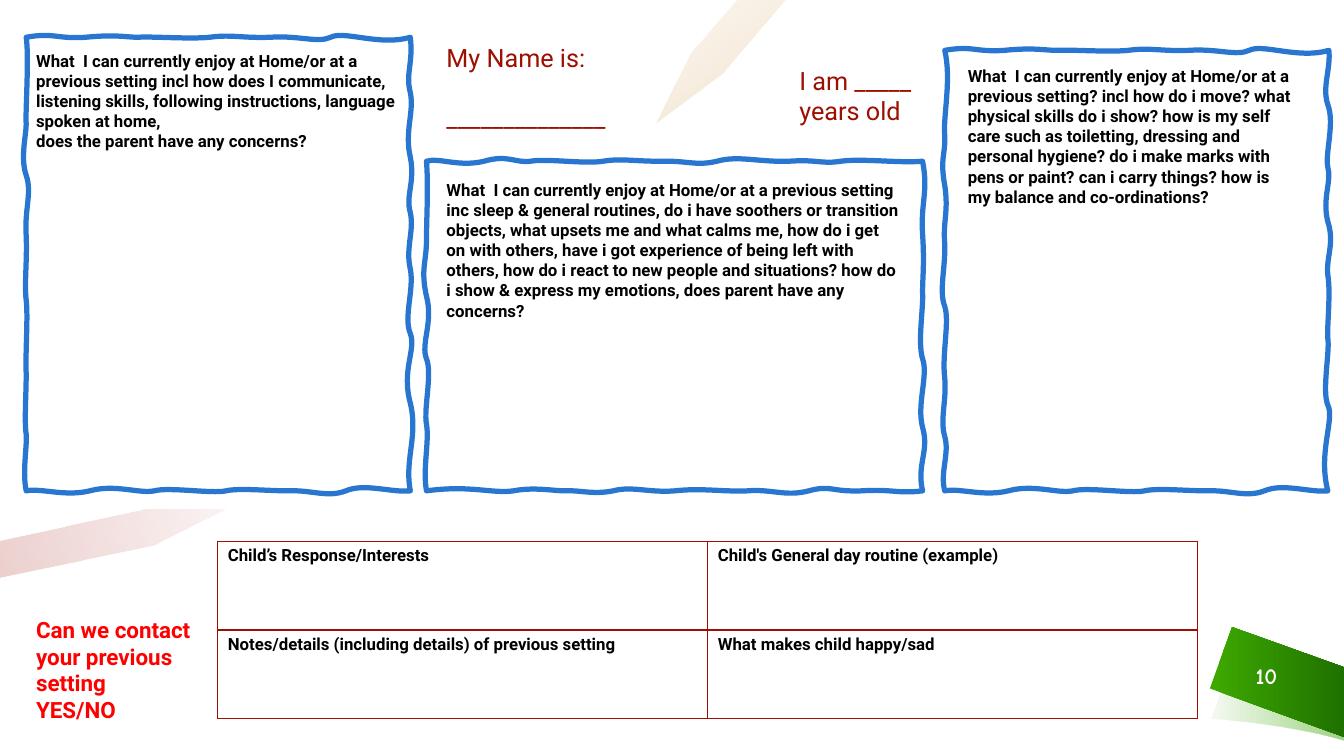
from lxml.etree import SubElement
from pptx import Presentation
from pptx.dml.color import RGBColor
from pptx.enum.text import MSO_ANCHOR, PP_ALIGN
from pptx.oxml.ns import qn
from pptx.util import Inches, Pt

BLACK = RGBColor(0x00, 0x00, 0x00)
WHITE = RGBColor(0xFF, 0xFF, 0xFF)
RED = RGBColor(0xFF, 0x00, 0x00)
MAROON = RGBColor(0x9D, 0x0F, 0x00)
OCHRE = RGBColor(0xC0, 0x74, 0x00)
BLUE = RGBColor(0x00, 0x5C, 0xC9)
GREEN = RGBColor(0x3D, 0xA8, 0x00)
DARK_GREEN = RGBColor(0x1F, 0x71, 0x00)

prs = Presentation()
prs.slide_width, prs.slide_height = Inches(13.33), Inches(7.5)
slide = prs.slides.add_slide(prs.slide_layouts[6])
shapes = slide.shapes


def draw_outline(start, segments):
    builder = shapes.build_freeform(Inches(start[0]), Inches(start[1]))
    builder.add_line_segments([(Inches(s[-2]), Inches(s[-1])) for s in segments], close=True)
    outline = builder.convert_to_shape()
    outline.shadow.inherit = False
    steps = list(outline._element.spPr.iter(qn("a:lnTo")))
    for step, segment in zip(steps, segments):
        if len(segment) == 6:
            step.tag = qn("a:cubicBezTo")
            for i in (0, 2):
                x, y = Inches(segment[i]) - outline.left, Inches(segment[i + 1]) - outline.top
                control = SubElement(step, qn("a:pt"), x=str(x), y=str(y))
                step.insert(i // 2, control)
    return outline


def write_text(frame, paragraphs, size, color, bold=True, font="Roboto"):
    frame.word_wrap = True
    frame.text = "\n".join(paragraphs)
    for paragraph in frame.paragraphs:
        for run in paragraph.runs:
            run.font.name = font
            run.font.size = Pt(size)
            run.font.bold = bold
            run.font.color.rgb = color


ribbons = [
    ((12.02, 7.13), [(12.02, 7.13, 12.78, 7.18, 13.33, 7.35), (13.33, 6.68),
                     (12.72, 6.51, 12.24, 6.52, 12.24, 6.52)],
     [(0.03, GREEN, 6), (1, GREEN, 50)], 0),
    ((13.33, 6.62), [(12.22, 6.22), (12, 6.83), (13.33, 7.31)],
     [(0.03, GREEN, 100), (1, DARK_GREEN, 100)], 0),
    ((7.79, 0), [(7.31, 0), (6.85, 0.53), (6.5, 1.23), (7.16, 0.74)],
     [(0, OCHRE, 5), (1, OCHRE, 20)], 53),
    ((2.24, 5.05), [(1.42, 5.05), (0, 5.36), (0, 5.73), (1.53, 5.41)],
     [(0, MAROON, 5), (1, MAROON, 20)], 164),
]
for start, segments, stops, clockwise_angle in ribbons:
    ribbon = draw_outline(start, segments)
    ribbon.line.fill.background()
    ribbon.fill.gradient()
    ribbon.fill.gradient_angle = -clockwise_angle % 360
    for stop, (position, color, _) in zip(ribbon.fill.gradient_stops, stops):
        stop.position = position
        stop.color.rgb = color
    for color_element, (_, _, opacity) in zip(ribbon._element.spPr.iter(qn("a:srgbClr")), stops):
        SubElement(color_element, qn("a:alpha"), val=str(opacity * 1000))

page_number = shapes.add_textbox(Inches(12.21), Inches(6.5), Inches(0.7), Inches(0.4)).text_frame
write_text(page_number, ["10"], 16, WHITE, font="Comic Neue")
page_number.vertical_anchor = MSO_ANCHOR.MIDDLE
page_number.paragraphs[0].alignment = PP_ALIGN.CENTER

outer_top = [
    (0.54, 0.32, 0.56, 0.39, 0.85, 0.37), (1.15, 0.34, 1.25, 0.37, 1.37, 0.37),
    (1.5, 0.36, 1.88, 0.39, 2.08, 0.37), (2.29, 0.34, 2.4, 0.38, 2.68, 0.37),
    (2.97, 0.35, 3.15, 0.43, 3.28, 0.37), (3.41, 0.3, 3.77, 0.46, 4.07, 0.37),
]
outer_bottom = [
    (3.89, 4.89, 3.61, 4.79, 3.43, 4.87), (3.25, 4.94, 3.09, 4.86, 2.87, 4.87),
    (2.65, 4.87, 2.37, 4.84, 2.24, 4.87), (2.11, 4.9, 1.67, 4.83, 1.53, 4.87),
    (1.38, 4.9, 1.14, 4.8, 0.89, 4.87), (0.64, 4.93, 0.41, 4.84, 0.26, 4.87),
]
shift = 9.11
drop = 0.13
right_top, right_bottom = [
    [tuple(v + (dy if i % 2 else shift) for i, v in enumerate(curve)) for curve in edge]
    for edge, dy in ((outer_top, drop), (outer_bottom, 0))
]

right_frame = right_top + [
    (13.2, 0.69, 13.11, 0.86, 13.17, 1.04), (13.24, 1.22, 13.14, 1.53, 13.17, 1.66),
    (13.21, 1.8, 13.11, 1.97, 13.17, 2.2), (13.24, 2.42, 13.15, 2.55, 13.17, 2.73),
    (13.2, 2.92, 13.16, 3.23, 13.17, 3.36), (13.19, 3.49, 13.11, 3.88, 13.17, 4.02),
    (13.24, 4.16, 13.07, 4.49, 13.17, 4.87),
] + right_bottom + [
    (9.32, 4.69, 9.42, 4.5, 9.37, 4.33), (9.32, 4.16, 9.39, 3.98, 9.37, 3.75),
    (9.34, 3.52, 9.42, 3.19, 9.37, 3.04), (9.31, 2.89, 9.38, 2.64, 9.37, 2.42),
    (9.35, 2.2, 9.41, 2.1, 9.37, 1.84), (9.32, 1.57, 9.38, 1.52, 9.37, 1.35),
    (9.35, 1.17, 9.44, 0.79, 9.37, 0.5),
]
middle_frame = [
    (4.35, 1.56, 4.55, 1.66, 4.8, 1.6), (5.04, 1.53, 5.11, 1.62, 5.26, 1.6),
    (5.42, 1.57, 5.8, 1.63, 5.98, 1.6), (6.16, 1.57, 6.28, 1.6, 6.54, 1.6),
    (6.81, 1.59, 6.9, 1.65, 7.11, 1.6), (7.32, 1.54, 7.53, 1.61, 7.82, 1.6),
    (8.12, 1.58, 8.14, 1.63, 8.34, 1.6), (8.54, 1.57, 8.92, 1.62, 9.15, 1.6),
    (9.21, 1.9, 9.13, 2.01, 9.15, 2.32), (9.17, 2.62, 9.15, 2.75, 9.15, 2.9),
    (9.16, 3.06, 9.1, 3.39, 9.15, 3.56), (9.21, 3.72, 9.09, 4.01, 9.15, 4.24),
    (9.22, 4.48, 9.09, 4.6, 9.15, 4.87), (8.9, 4.9, 8.85, 4.85, 8.54, 4.87),
    (8.23, 4.88, 8.25, 4.81, 8.02, 4.87), (7.79, 4.93, 7.66, 4.85, 7.41, 4.87),
    (7.16, 4.88, 6.96, 4.84, 6.69, 4.87), (6.43, 4.89, 6.27, 4.82, 6.08, 4.87),
    (5.88, 4.91, 5.74, 4.86, 5.61, 4.87), (5.48, 4.87, 5.3, 4.83, 5.09, 4.87),
    (4.89, 4.9, 4.66, 4.81, 4.23, 4.87), (4.19, 4.65, 4.26, 4.38, 4.23, 4.21),
    (4.2, 4.05, 4.29, 3.71, 4.23, 3.56), (4.17, 3.41, 4.3, 3.2, 4.23, 2.94),
    (4.17, 2.67, 4.23, 2.6, 4.23, 2.38), (4.23, 2.16, 4.25, 1.86, 4.23, 1.6),
]
left_frame = outer_top + [
    (4.1, 0.63, 4.02, 0.73, 4.07, 0.92), (4.11, 1.11, 4.01, 1.31, 4.07, 1.56),
    (4.12, 1.81, 4.02, 1.94, 4.07, 2.11), (4.11, 2.29, 4.02, 2.46, 4.07, 2.67),
    (4.11, 2.87, 4, 3.15, 4.07, 3.31), (4.13, 3.47, 3.98, 3.67, 4.07, 4),
    (4.15, 4.33, 4.01, 4.56, 4.07, 4.87),
] + outer_bottom + [
    (0.22, 4.68, 0.27, 4.43, 0.26, 4.31), (0.24, 4.19, 0.26, 3.91, 0.26, 3.71),
    (0.25, 3.51, 0.28, 3.14, 0.26, 2.98), (0.24, 2.82, 0.27, 2.59, 0.26, 2.34),
    (0.24, 2.09, 0.32, 1.91, 0.26, 1.74), (0.2, 1.57, 0.26, 1.34, 0.26, 1.23),
    (0.25, 1.13, 0.29, 0.57, 0.26, 0.37),
]
for curves in (right_frame, middle_frame, left_frame):
    wavy_frame = draw_outline(curves[-1][-2:], curves)
    wavy_frame.fill.background()
    wavy_frame.line.color.rgb = BLUE
    wavy_frame.line.width = Pt(3.75)
    SubElement(next(wavy_frame._element.spPr.iter(qn("a:srgbClr"))), qn("a:alpha"), val="84000")

prompts = [
    ((0.26, 0.45, 4.03, 0.91), 12, BLACK, True,
     ["What  I can currently enjoy at Home/or at a previous setting incl how does I communicate, "
      "listening skills, following instructions, language spoken at home,",
      "does the parent have any concerns?"]),
    ((4.33, 1.73, 4.71, 1.31), 12, BLACK, True,
     ["What  I can currently enjoy at Home/or at a previous setting inc sleep & general routines, "
      "do i have soothers or transition objects, what upsets me and what calms me, how do i get on "
      "with others, have i got experience of being left with others, how do i react to new people "
      "and situations? how do i show & express my emotions, does parent have any concerns?"]),
    ((9.5, 0.6, 3.41, 1.51), 12, BLACK, True,
     ["What  I can currently enjoy at Home/or at a previous setting? incl how do i move? what "
      "physical skills do i show? how is my self care such as toiletting, dressing and personal "
      "hygiene? do i make marks with pens or paint? can i carry things? how is my balance and "
      "co-ordinations?"]),
    ((4.33, 0.37, 2.05, 1.01), 18, MAROON, False, ["My Name is:", "______________"]),
    ((7.83, 0.6, 1.33, 1.01), 18, MAROON, False, ["I am _____ years old"]),
    ((0.26, 6.06, 1.76, 1.18), 16, RED, True, ["Can we contact your previous setting", "YES/NO"]),
]
for place, size, color, bold, paragraphs in prompts:
    prompt = shapes.add_textbox(*[Inches(v) for v in place]).text_frame
    write_text(prompt, paragraphs, size, color, bold)
    if paragraphs[0] == "My Name is:":
        prompt.paragraphs[1].space_before = Pt(21.5)

responses = [
    ["Child’s Response/Interests", "Child's General day routine (example)"],
    ["Notes/details (including details) of previous setting", "What makes child happy/sad"],
]
response_table = shapes.add_table(2, 2, Inches(2.16), Inches(5.37), Inches(9.72), Inches(1.76)).table
response_table.first_row = False
response_table.horz_banding = False
for r, row in enumerate(responses):
    for c, heading in enumerate(row):
        cell = response_table.cell(r, c)
        write_text(cell.text_frame, [heading], 12, BLACK)
        for side in ("a:lnL", "a:lnR", "a:lnT", "a:lnB"):
            border = SubElement(cell._tc.get_or_add_tcPr(), qn(side), w=str(Pt(1)))
            SubElement(SubElement(border, qn("a:solidFill")), qn("a:srgbClr"), val=str(MAROON))
        cell.fill.background()

prs.save("out.pptx")
